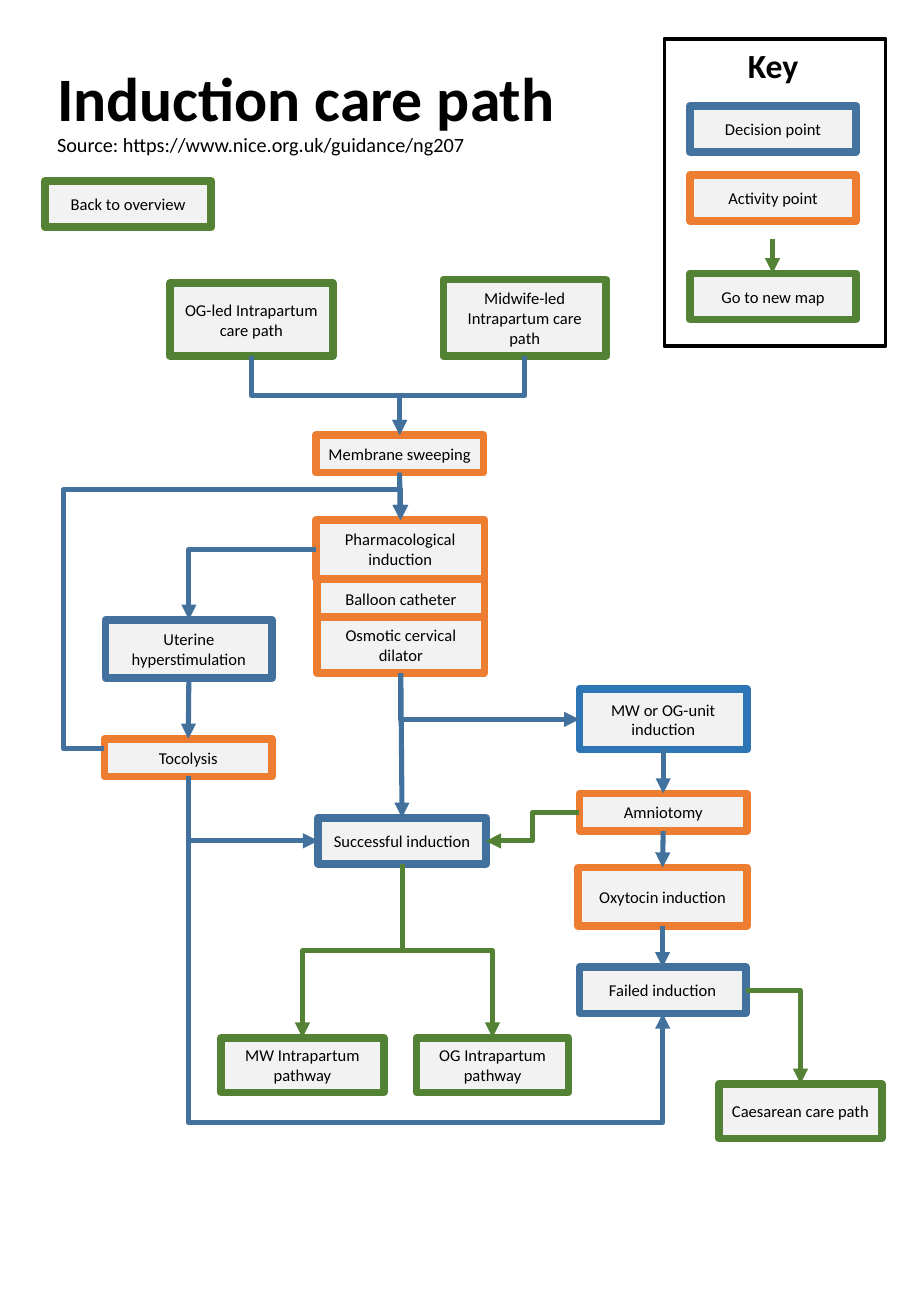
from dataclasses import dataclass
from enum import IntEnum

from lxml.etree import SubElement
from pptx import Presentation
from pptx.dml.color import RGBColor
from pptx.enum.shapes import MSO_CONNECTOR as Wire, MSO_SHAPE as Form
from pptx.enum.text import MSO_ANCHOR as Anchor, PP_ALIGN as Align
from pptx.oxml.ns import qn
from pptx.util import Emu, Pt

PX = 9144  # 100 px to the inch
BLUE, GREEN, ORANGE = "41719C", "548235", "ED7D31"
PALE, BLACK = "F2F2F2", "000000"


class Side(IntEnum):
    """Connection sites of a rectangle."""
    TOP = 0
    LEFT = 1
    BOTTOM = 2
    RIGHT = 3


TOP, LEFT, BOTTOM, RIGHT = Side


@dataclass
class Box:
    key: str
    text: str
    x: int
    y: int
    w: int
    h: int
    color: str


@dataclass
class Link:
    start: str
    out: Side
    end: str
    into: Side
    color: str = BLUE
    bend: float = 0.5


BOXES = [
    Box("midwife", "Midwife-led Intrapartum care path", 365, 230, 134, 63, GREEN),
    Box("og", "OG-led Intrapartum care path", 140, 233, 134, 60, GREEN),
    Box("back", "Back to overview", 37, 149, 137, 38, GREEN),
    Box("decide", "Decision point", 568, 87, 137, 38, "43739E"),
    Box("act", "Activity point", 568, 144, 137, 38, ORANGE),
    Box("go", "Go to new map", 568, 225, 137, 38, GREEN),
    Box("sweep", "Membrane sweeping", 260, 358, 138, 31, ORANGE),
    Box("pharma", "Pharmacological induction", 260, 428, 139, 48, ORANGE),
    Box("balloon", "Balloon catheter", 261, 477, 138, 31, ORANGE),
    Box("dilator", "Osmotic cervical dilator", 261, 508, 138, 46, ORANGE),
    Box("hyper", "Uterine hyperstimulation", 87, 510, 137, 48, BLUE),
    Box("toco", "Tocolysis", 86, 608, 138, 31, ORANGE),
    Box("success", "Successful induction", 262, 673, 138, 38, BLUE),
    Box("unit", "MW or OG-unit induction", 477, 567, 138, 50, "2E75B6"),
    Box("amnio", "Amniotomy", 477, 653, 138, 31, ORANGE),
    Box("oxy", "Oxytocin induction", 476, 714, 139, 48, ORANGE),
    Box("failed", "Failed induction", 477, 796, 137, 38, BLUE),
    Box("mw path", "MW Intrapartum pathway", 182, 854, 134, 45, GREEN),
    Box("og path", "OG Intrapartum pathway", 343, 854, 125, 45, GREEN),
    Box("caesar", "Caesarean care path", 592, 892, 134, 45, GREEN),
]

LINKS = [
    Link("og", BOTTOM, "sweep", TOP),
    Link("midwife", BOTTOM, "sweep", TOP),
    Link("sweep", BOTTOM, "pharma", TOP),
    Link("pharma", LEFT, "hyper", TOP),
    Link("hyper", BOTTOM, "toco", TOP),
    Link("toco", BOTTOM, "success", LEFT),
    Link("toco", BOTTOM, "failed", BOTTOM, bend=1.46),
    Link("dilator", BOTTOM, "unit", LEFT),
    Link("dilator", BOTTOM, "success", TOP),
    Link("unit", BOTTOM, "amnio", TOP),
    Link("amnio", BOTTOM, "oxy", TOP),
    Link("oxy", BOTTOM, "failed", TOP),
    Link("amnio", LEFT, "success", RIGHT, GREEN),
    Link("failed", RIGHT, "caesar", TOP, GREEN),
    Link("success", BOTTOM, "mw path", TOP, GREEN),
    Link("success", BOTTOM, "og path", TOP, GREEN),
]

LOOP = [(86, 616), (52, 616), (52, 403), (330, 403), (330, 428)]


def px(*vals: int) -> list[Emu]:
    return [Emu(v * PX) for v in vals]


def rgb(code: str) -> RGBColor:
    return RGBColor.from_string(code)


def write(frame, text: str, size=9.8, bold=False, align=Align.CENTER,
          anchor=Anchor.MIDDLE, space=1.0, more=False) -> None:
    """Write one paragraph; with more, add it below those already there."""
    frame.word_wrap = True
    frame.vertical_anchor = anchor
    para = frame.add_paragraph() if more else frame.paragraphs[0]
    para.alignment, para.line_spacing = align, space
    run = para.add_run()
    run.text = text
    font = run.font
    font.name, font.size, font.bold = "Calibri", Pt(size), bold
    font.color.rgb = rgb(BLACK)


def rect(slide, x: int, y: int, w: int, h: int, color: str, width: float):
    shape = slide.shapes.add_shape(Form.RECTANGLE, *px(x, y, w, h))
    shape.shadow.inherit = False
    shape.fill.background()
    shape.line.color.rgb = rgb(color)
    shape.line.width = Pt(width)
    return shape


def add_box(slide, box: Box):
    shape = rect(slide, box.x, box.y, box.w, box.h, box.color, 4.5)
    shape.fill.solid()
    shape.fill.fore_color.rgb = rgb(PALE)
    write(shape.text_frame, box.text)
    return shape


def style(shape, color: str) -> None:
    """Give a line its colour, width and arrowhead, and no shadow."""
    shape.line.color.rgb = rgb(color)
    shape.line.width = Pt(3)
    props = shape._element.spPr
    SubElement(props.find(qn("a:ln")), qn("a:tailEnd"), type="triangle")
    if props.find(qn("a:effectLst")) is None:
        SubElement(props, qn("a:effectLst"))


def turn(wire, link: Link) -> None:
    """Shape an elbow so that it leaves and enters on the sides of its link."""
    dx, dy = wire.end_x - wire.begin_x, wire.end_y - wire.begin_y
    mid_x, mid_y = wire.begin_x + dx // 2, wire.begin_y + dy // 2
    wide, high = abs(dx), abs(dy)
    down = link.out == BOTTOM
    if down:
        wide, high = high, wide
        rot, flip = (270, "flipH") if dx > 0 else (90, None)
    else:
        rot, flip = (0, None) if dx > 0 else (180, "flipV")
    wire.left, wire.top = Emu(mid_x - wide // 2), Emu(mid_y - high // 2)
    wire.width, wire.height = Emu(wide), Emu(high)
    props = wire._element.spPr
    frame = props.find(qn("a:xfrm"))
    for name in ("flipH", "flipV"):
        frame.set(name, "1" if name == flip else "0")
    frame.set("rot", str(rot * 60000))
    geom = props.find(qn("a:prstGeom"))
    if link.out % 2 != link.into % 2:
        geom.set("prst", "bentConnector2")
    else:
        SubElement(geom.find(qn("a:avLst")), qn("a:gd"), name="adj1",
                   fmla=f"val {round(link.bend * 100000)}")


def add_link(slide, link: Link, shapes: dict) -> None:
    start, end = shapes[link.start], shapes[link.end]
    gap = abs(start.left + start.width // 2 - end.left - end.width // 2)
    bent = gap > 3 * PX
    wire = slide.shapes.add_connector(
        Wire.ELBOW if bent else Wire.STRAIGHT, *px(0, 0, 0, 0))
    wire.begin_connect(start, link.out)
    wire.end_connect(end, link.into)
    if bent:
        turn(wire, link)
    style(wire, link.color)


def add_loop(slide) -> None:
    pen = slide.shapes.build_freeform(*LOOP[0], scale=PX)
    pen.add_line_segments(LOOP[1:], close=False)
    loop = pen.convert_to_shape()
    loop.shadow.inherit = False
    loop.fill.background()
    style(loop, BLUE)


def main() -> None:
    deck = Presentation()
    deck.slide_width, deck.slide_height = px(750, 1083)
    slide = deck.slides.add_slide(deck.slide_layouts[6])
    rect(slide, 547, 32, 182, 253, BLACK, 2.25)
    key = slide.shapes.add_textbox(*px(568, 32, 137, 44)).text_frame
    write(key, "Key", size=20, bold=True, anchor=Anchor.TOP)
    head = slide.shapes.add_textbox(*px(39, 38, 476, 95)).text_frame
    head.margin_left, head.margin_right = px(8, 8)
    head.margin_top, head.margin_bottom = px(4, 4)
    look = dict(align=Align.LEFT, anchor=Anchor.BOTTOM, space=0.9)
    write(head, "Induction care path", size=36.6, bold=True, **look)
    write(head, "Source: https://www.nice.org.uk/guidance/ng207", size=12,
          more=True, **look)
    shapes = {box.key: add_box(slide, box) for box in BOXES}
    for link in LINKS:
        add_link(slide, link, shapes)
    add_loop(slide)
    style(slide.shapes.add_connector(Wire.STRAIGHT, *px(636, 197, 636, 225)), GREEN)
    deck.save("out.pptx")


if __name__ == "__main__":
    main()
